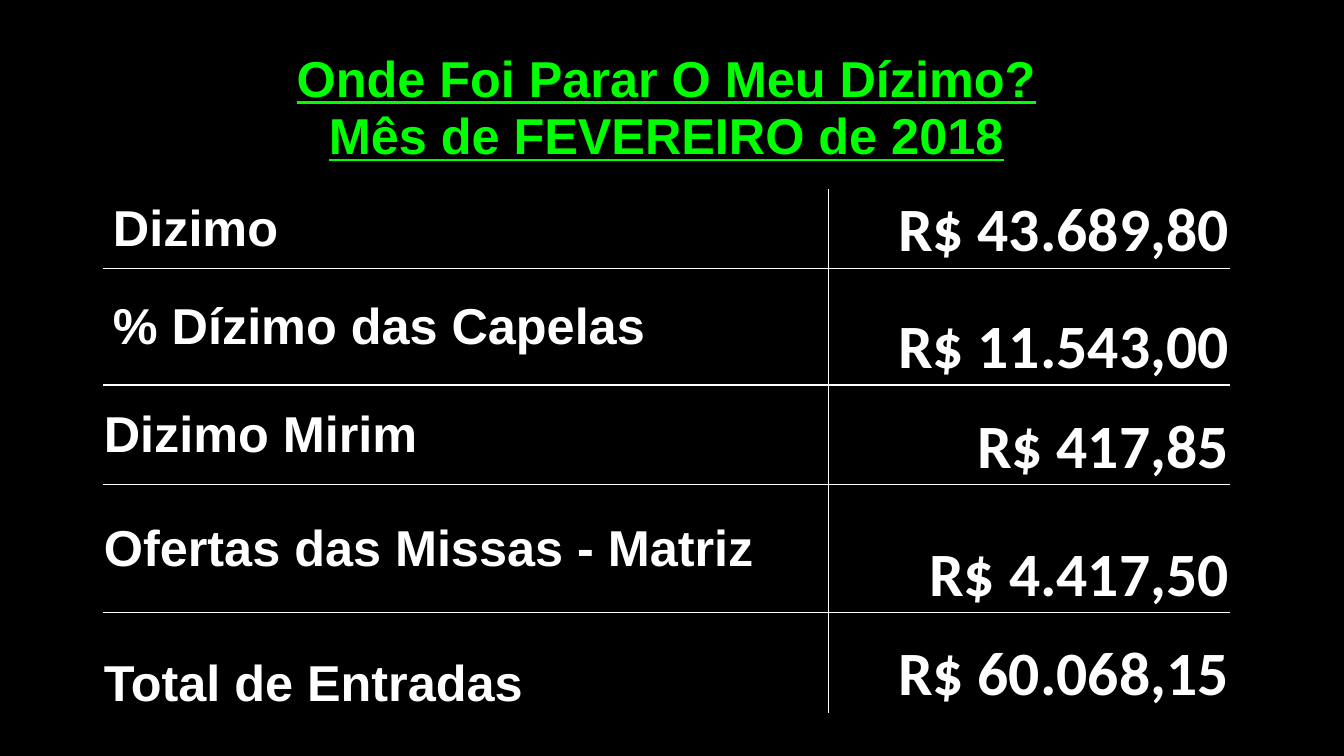
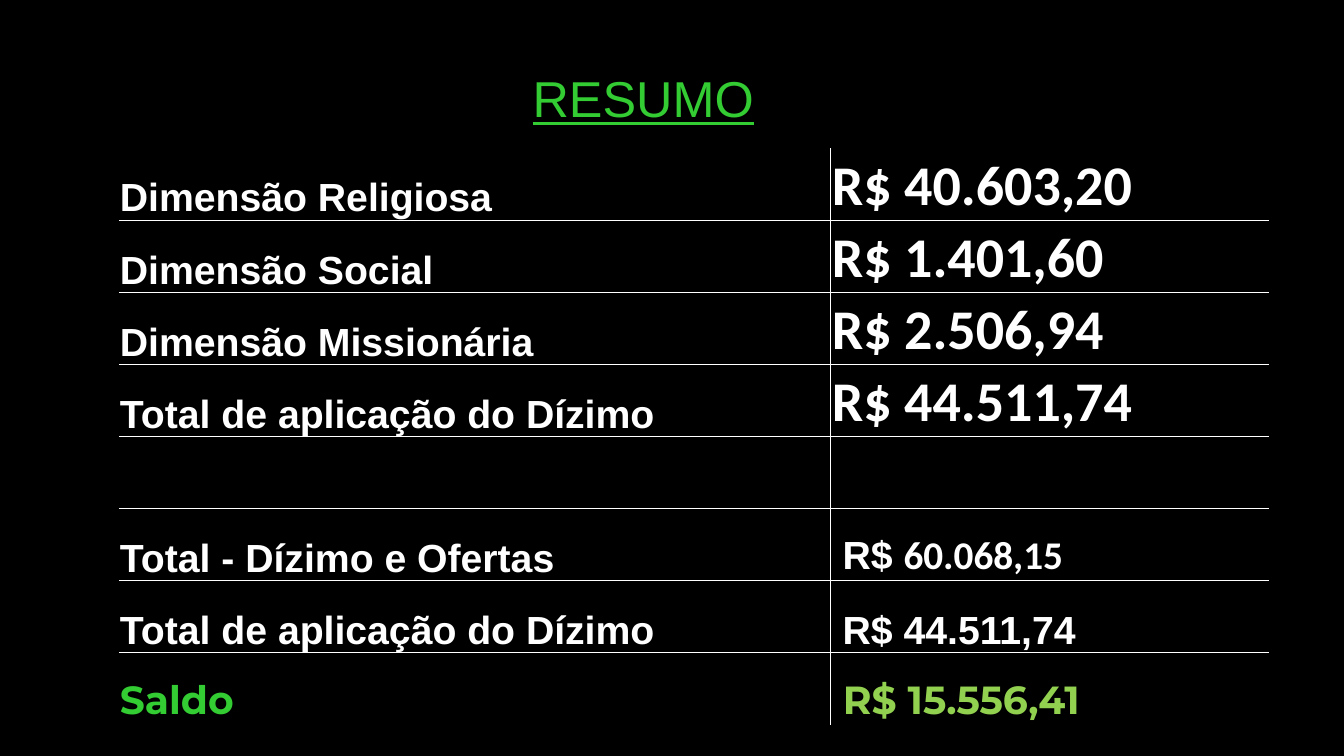
from dataclasses import dataclass

from lxml import etree
from pptx import Presentation
from pptx import slide as sl
from pptx import table as tb
from pptx import util as u
from pptx.dml import color
from pptx.enum import text
from pptx.oxml import ns
from pptx.text import text as tx

LEFT, MID, RIGHT = text.PP_ALIGN.LEFT, text.PP_ALIGN.CENTER, text.PP_ALIGN.RIGHT
CENTER, LOW = text.MSO_ANCHOR.MIDDLE, text.MSO_ANCHOR.BOTTOM


@dataclass(frozen=True)
class Theme:
    black: str = "000000"
    white: str = "FFFFFF"
    lime: str = "00FF00"
    green: str = "33CC33"
    leaf: str = "92D050"
    sans: str = "Arial"
    digit: str = "Calibri"
    accent: str = "Montserrat"
    title: int = 36
    label: int = 28
    large: int = 40
    huge: int = 44
    rule: int = 1


T = Theme()
TIGHT = (0.01, 0.01, 0.01, 0)
ROOMY = (0.1, 0.05, 0.1, 0.05)


@dataclass(frozen=True)
class Run:
    words: str
    size: int
    font: str = T.sans
    hue: str = T.white
    bold: bool = True
    under: bool = False


@dataclass(frozen=True)
class Cell:
    runs: tuple[Run, ...] = ()
    align: text.PP_ALIGN = LEFT
    anchor: text.MSO_ANCHOR = LOW
    inset: tuple[float, ...] = TIGHT


@dataclass(frozen=True)
class Grid:
    left: float
    top: float
    cols: tuple[float, ...]
    rows: tuple[float, ...]
    cells: tuple[tuple[Cell, ...], ...]
    ruled: bool = True


def write(para: tx._Paragraph, runs: tuple[Run, ...], align: text.PP_ALIGN) -> None:
    para.alignment = align
    for item in runs:
        run = para.add_run()
        run.text = item.words
        font = run.font
        font.size = u.Pt(item.size)
        font.name = item.font
        font.bold = item.bold
        font.underline = item.under
        font.color.rgb = color.RGBColor.from_string(item.hue)


def edge(cell: tb._Cell, sides: dict[str, bool]) -> None:
    props = cell._tc.get_or_add_tcPr()
    for spot, (side, shown) in enumerate(sides.items()):
        line = etree.Element(ns.qn(f"a:ln{side}"), w=str(u.Pt(T.rule)))
        if shown:
            fill = etree.SubElement(line, ns.qn("a:solidFill"))
            etree.SubElement(fill, ns.qn("a:srgbClr"), val=T.white)
        else:
            etree.SubElement(line, ns.qn("a:noFill"))
        props.insert(spot, line)


def draw(slide: sl.Slide, grid: Grid) -> None:
    high, wide = len(grid.rows), len(grid.cols)
    table = slide.shapes.add_table(
        high, wide, u.Inches(grid.left), u.Inches(grid.top),
        u.Inches(sum(grid.cols)), u.Inches(sum(grid.rows))).table
    table.first_row = table.horz_banding = False
    for col, size in zip(table.columns, grid.cols):
        col.width = u.Inches(size)
    for row, size in zip(table.rows, grid.rows):
        row.height = u.Inches(size)
    for r, line in enumerate(grid.cells):
        for c, item in enumerate(line):
            cell = table.cell(r, c)
            cell.fill.background()
            cell.vertical_anchor = item.anchor
            (cell.margin_left, cell.margin_top,
             cell.margin_right, cell.margin_bottom) = map(u.Inches, item.inset)
            write(cell.text_frame.paragraphs[0], item.runs, item.align)
            edge(cell, {"L": grid.ruled and c > 0,
                        "R": grid.ruled and c < wide - 1,
                        "T": grid.ruled and r > 0,
                        "B": grid.ruled and r < high - 1})


def entry(name: str, value: str, anchor: text.MSO_ANCHOR = CENTER,
          inset: tuple[float, ...] = TIGHT) -> tuple[Cell, Cell]:
    return (Cell((Run(name, T.title),), anchor=anchor, inset=inset),
            Cell((Run(value, T.huge, T.digit),), RIGHT))


def total(name: str, *runs: Run) -> tuple[Cell, Cell]:
    return Cell((Run(name, T.label),)), Cell(runs)


def head(words: str) -> tuple[Cell]:
    return (Cell((Run(words, T.title, hue=T.lime, under=True),), MID),)


def income(slide: sl.Slide) -> None:
    draw(slide, Grid(1.02, 1.88, (7.2, 3.98), (0.78, 1.16, 0.99, 1.27, 0.99), (
        entry("Dizimo", "R$ 43.689,80", inset=ROOMY),
        entry("% Dízimo das Capelas", "R$ 11.543,00", inset=ROOMY),
        entry("Dizimo Mirim", "R$ 417,85"),
        entry("Ofertas das Missas - Matriz", "R$ 4.417,50"),
        entry("Total de Entradas", "R$ 60.068,15", LOW))))
    draw(slide, Grid(2.41, 0.44, (8.4,), (0.63, 0.57), (
        head("Onde Foi Parar O Meu Dízimo?"),
        head("Mês de FEVEREIRO de 2018")), ruled=False))


def summary(slide: sl.Slide) -> None:
    spent = (("Dimensão Religiosa", "R$ 40.603,20"),
             ("Dimensão Social", "R$ 1.401,60"),
             ("Dimensão Missionária", "R$ 2.506,94"),
             ("Total de aplicação do Dízimo", "R$ 44.511,74"))
    cells = (
        *(total(name, Run(value, T.large, T.digit)) for name, value in spent),
        (Cell(), Cell()),
        total("Total - Dízimo e Ofertas", Run(" R$ ", T.label),
              Run("60.068,15", T.label, T.digit)),
        total("Total de aplicação do Dízimo", Run(" R$ 44.511,74", T.label)),
        (Cell((Run("Saldo", T.label, T.accent, T.green),)),
         Cell((Run(" R$ 15.556,41", T.label, T.accent, T.leaf),))))
    draw(slide, Grid(1.18, 1.47, (7.06, 4.35), (0.715,) * len(cells), cells))
    box = slide.shapes.add_textbox(
        u.Inches(2.88), u.Inches(0.62), u.Inches(7), u.Inches(0.71))
    frame = box.text_frame
    frame.word_wrap = True
    frame.auto_size = text.MSO_AUTO_SIZE.SHAPE_TO_FIT_TEXT
    write(frame.paragraphs[0],
          (Run("RESUMO", T.title, hue=T.green, bold=False, under=True),), MID)


def main() -> None:
    deck = Presentation()
    deck.slide_width, deck.slide_height = u.Inches(13.33), u.Inches(7.5)
    back = deck.slide_master.background.fill
    back.solid()
    back.fore_color.rgb = color.RGBColor.from_string(T.black)
    for build in (income, summary):
        build(deck.slides.add_slide(deck.slide_layouts[6]))
    deck.save("out.pptx")


if __name__ == "__main__":
    main()
